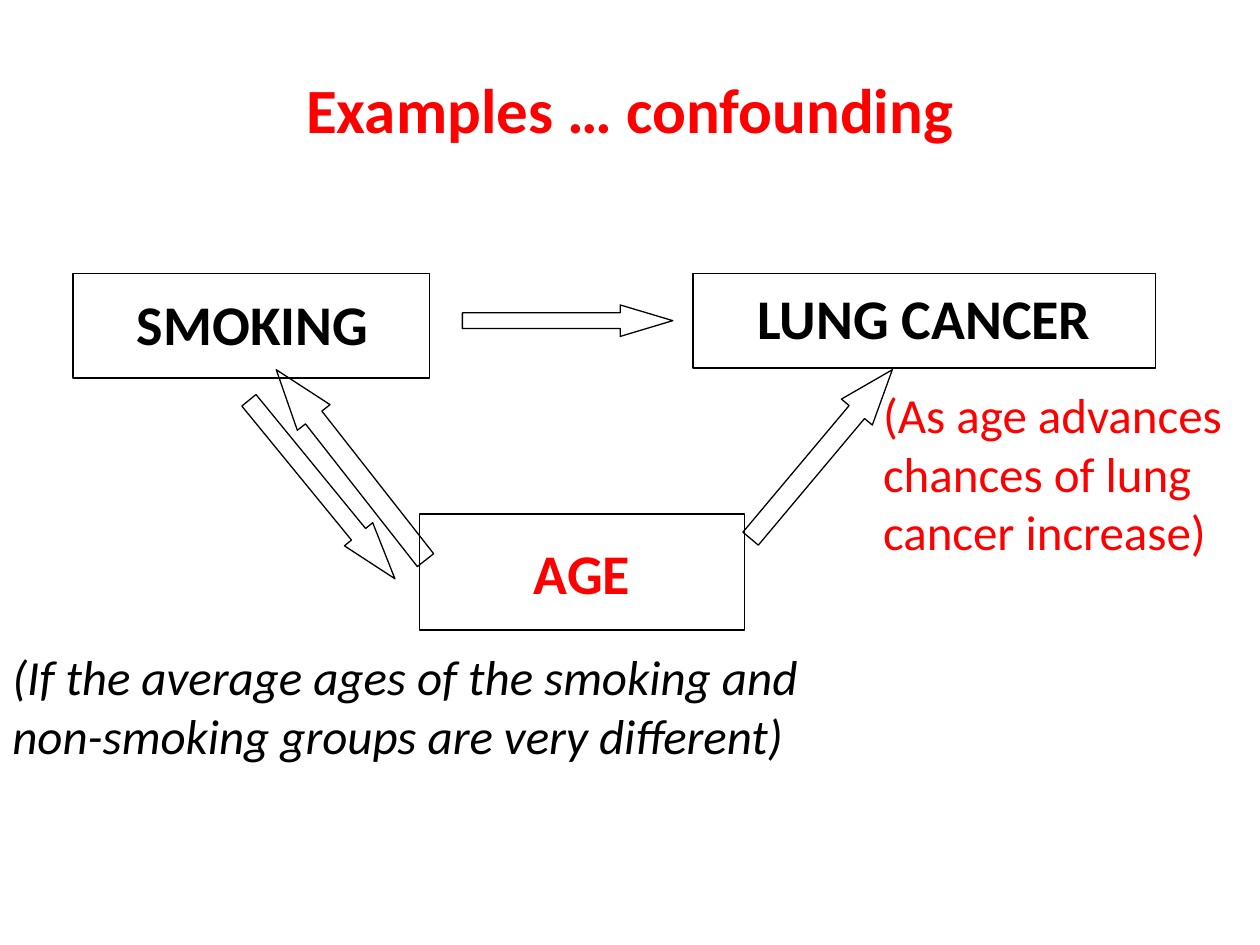
"""Build the slide on age as a confounder of smoking and lung cancer."""
from dataclasses import dataclass

from pptx import Presentation
from pptx.dml.color import RGBColor
from pptx.enum.shapes import MSO_SHAPE
from pptx.enum.text import MSO_ANCHOR, PP_ALIGN
from pptx.util import Inches, Pt

COLORS = {"black": "000000", "red": "FF0000"}
Area = tuple[float, float, float, float]


@dataclass
class Label:
    area: Area
    lines: list[str]
    size: int = 28
    color: str = "black"
    bold: bool = False
    italic: bool = False
    align: PP_ALIGN = PP_ALIGN.LEFT


@dataclass
class Arrow:
    kind: MSO_SHAPE
    area: Area
    head: float
    turn: float = 0


BOXES: list[Area] = [
    (0.58, 2.17, 2.83, 0.83),
    (5.5, 2.17, 3.67, 0.75),
    (3.33, 4.08, 2.58, 0.92),
]
ARROWS = [
    Arrow(MSO_SHAPE.RIGHT_ARROW, (3.67, 2.42, 1.67, 0.25), 1.67),
    Arrow(MSO_SHAPE.UP_ARROW, (6.36, 2.73, 0.32, 1.75), 1.37, 40),
    Arrow(MSO_SHAPE.UP_ARROW, (2.62, 2.73, 0.33, 1.92), 1.46, 321.9),
    Arrow(MSO_SHAPE.DOWN_ARROW, (2.41, 2.97, 0.29, 1.83), 1.57, 320.7),
]
TITLE = Label((0.5, 0.3, 9, 1.12), ["Examples … confounding"], 36, "red",
              bold=True, align=PP_ALIGN.CENTER)
AGE = Label(BOXES[2], ["AGE"], 32, "red", bold=True, align=PP_ALIGN.CENTER)
LABELS = [
    Label((0.67, 2.25, 2.67, 0.64), ["SMOKING"], 32,
          bold=True, align=PP_ALIGN.CENTER),
    Label((5.5, 2.2, 3.67, 0.63), ["LUNG CANCER"], 32,
          bold=True, align=PP_ALIGN.CENTER),
    Label((0, 5.08, 6.67, 1.04),
          ["(If the average ages of the smoking and",
           "non-smoking groups are very different)"], italic=True),
    Label((6.91, 3, 2.92, 1.51),
          ["(As age advances", "chances of lung", "cancer increase)"],
          color="red"),
]


def write(frame, label: Label) -> None:
    """Fill a text frame with the lines of a label."""
    frame.text = "\n".join(label.lines)
    for para in frame.paragraphs:
        para.alignment = label.align
        font = para.font
        font.name, font.size = "Calibri", Pt(label.size)
        font.bold, font.italic = label.bold, label.italic
        font.color.rgb = RGBColor.from_string(COLORS[label.color])


def outline(slide, kind: MSO_SHAPE, area: Area):
    """Draw an unfilled shape with a thin black line."""
    shape = slide.shapes.add_shape(kind, *map(Inches, area))
    shape.shadow.inherit = False
    shape.fill.background()
    shape.line.color.rgb = RGBColor.from_string(COLORS["black"])
    shape.line.width = Pt(0.75)
    return shape


def point(slide, arrow: Arrow) -> None:
    """Draw a block arrow."""
    shape = outline(slide, arrow.kind, arrow.area)
    shape.adjustments[0] = 0.5
    shape.adjustments[1] = arrow.head
    shape.rotation = arrow.turn


def note(slide, label: Label) -> None:
    """Add a wrapped text box."""
    frame = slide.shapes.add_textbox(*map(Inches, label.area)).text_frame
    frame.word_wrap = True
    write(frame, label)


def main() -> None:
    """Build and save the deck."""
    deck = Presentation()
    deck.slide_width, deck.slide_height = Inches(10), Inches(7.5)
    slide = deck.slides.add_slide(deck.slide_layouts[5])
    title = slide.shapes.title
    title.left, title.top, title.width, title.height = map(Inches, TITLE.area)
    title.text_frame.vertical_anchor = MSO_ANCHOR.MIDDLE
    write(title.text_frame, TITLE)
    for label in LABELS[:2]:
        note(slide, label)
    boxes = [outline(slide, MSO_SHAPE.RECTANGLE, area) for area in BOXES]
    frame = boxes[2].text_frame
    frame.word_wrap = False
    frame.vertical_anchor = MSO_ANCHOR.MIDDLE
    write(frame, AGE)
    for arrow in ARROWS:
        point(slide, arrow)
    for label in LABELS[2:]:
        note(slide, label)
    deck.save("out.pptx")


if __name__ == "__main__":
    main()
